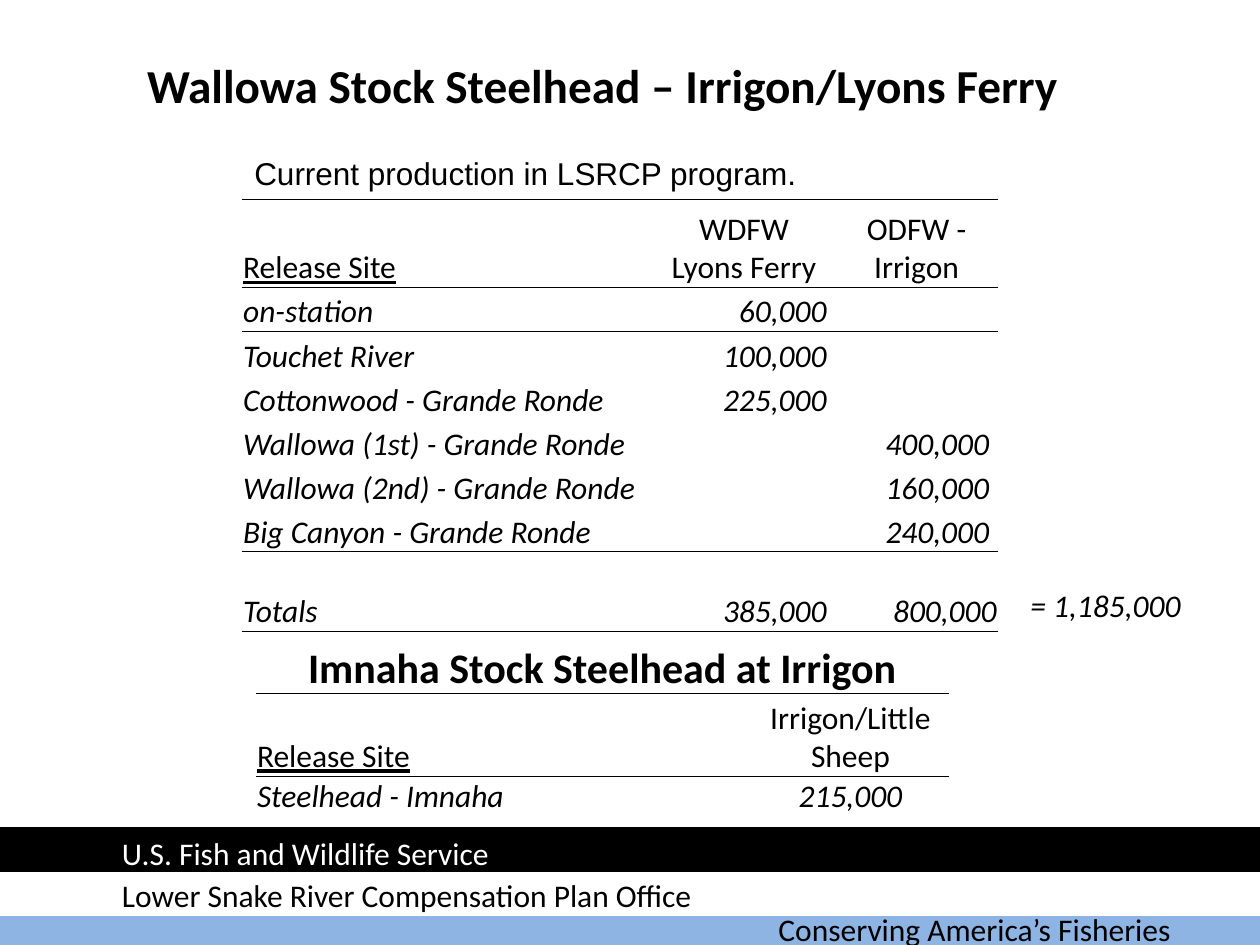
from lxml.etree import SubElement
from pptx import Presentation
from pptx.dml.color import RGBColor
from pptx.enum.shapes import MSO_SHAPE
from pptx.enum.text import MSO_ANCHOR, PP_ALIGN
from pptx.oxml import parse_xml
from pptx.oxml.ns import nsdecls, qn
from pptx.util import Inches, Pt

BLACK = RGBColor(0x00, 0x00, 0x00)
WHITE = RGBColor(0xFF, 0xFF, 0xFF)
BLUE = RGBColor(0x8E, 0xB4, 0xE3)
PLAIN_TABLE_STYLE = "{2D5ABB26-0587-4C30-8999-92F81FD0307C}"
CELL_MARGIN = 0.01
NUMBER_MARGIN = 0.07

PRODUCTION = [
    ("Release Site", "WDFW\vLyons Ferry", "ODFW -\vIrrigon"),
    ("on-station", "60,000", ""),
    ("Touchet River", "100,000", ""),
    ("Cottonwood - Grande Ronde", "225,000", ""),
    ("Wallowa (1st) - Grande Ronde", "", "400,000"),
    ("Wallowa (2nd) - Grande Ronde", "", "160,000"),
    ("Big Canyon - Grande Ronde", "", "240,000"),
    ("Totals", "385,000", "800,000"),
]
IMNAHA = [
    ("Release Site", "Irrigon/Little\vSheep"),
    ("Steelhead - Imnaha", "215,000"),
]


def format_runs(paragraph, size=18, font="Calibri", color=BLACK,
                bold=False, italic=False, underline=False):
    for run in paragraph.runs:
        run.font.size = Pt(size)
        run.font.name = font
        run.font.color.rgb = color
        run.font.bold = bold
        run.font.italic = italic
        run.font.underline = underline


def add_band(slide, left, top, color):
    shape = slide.shapes.add_shape(
        MSO_SHAPE.RECTANGLE, Inches(left), Inches(top), Inches(10), Inches(0.33))
    shape.shadow.inherit = False
    shape.fill.solid()
    shape.fill.fore_color.rgb = color
    shape.line.color.rgb = color
    shape.line.width = Pt(2)


def add_text(slide, left, top, width, text, **style):
    shape = slide.shapes.add_textbox(
        Inches(left), Inches(top), Inches(width), Inches(0.4))
    shape.text_frame.word_wrap = True
    shape.text_frame.text = text
    format_runs(shape.text_frame.paragraphs[0], **style)
    return shape


def add_heading(slide, top, text, size):
    shape = add_text(slide, 0.47, top, 8.62, text, size=size, bold=True)
    shape.height = Inches(0.5)
    shape.text_frame.vertical_anchor = MSO_ANCHOR.MIDDLE
    shape.text_frame.paragraphs[0].alignment = PP_ALIGN.CENTER


def add_rule(cell, tag):
    line = parse_xml(f'<a:{tag} {nsdecls("a")} w="6350"/>')
    fill = SubElement(line, qn("a:solidFill"))
    SubElement(fill, qn("a:srgbClr"), val=str(BLACK))
    cell._tc.get_or_add_tcPr().insert(0, line)


def fill_cell(cell, text, alignment, right_margin, **style):
    cell.fill.background()
    cell.margin_left = cell.margin_top = Inches(CELL_MARGIN)
    cell.margin_right = Inches(right_margin)
    cell.margin_bottom = 0
    cell.vertical_anchor = MSO_ANCHOR.BOTTOM
    cell.text_frame.text = text
    paragraph = cell.text_frame.paragraphs[0]
    paragraph.alignment = alignment
    format_runs(paragraph, **style)


def add_release_table(slide, left, top, widths, heights, rows, rules, number_alignment):
    frame = slide.shapes.add_table(
        len(rows), len(widths), Inches(left), Inches(top),
        Inches(sum(widths)), Inches(sum(heights)))
    table = frame.table
    table.first_row = table.horz_banding = False
    table._tbl.tblPr.find(qn("a:tableStyleId")).text = PLAIN_TABLE_STYLE
    for column, width in zip(table.columns, widths):
        column.width = Inches(width)
    for row, height in zip(table.rows, heights):
        row.height = Inches(height)

    for row_index, values in enumerate(rows):
        header = row_index == 0
        for column_index, text in enumerate(values):
            cell = table.cell(row_index, column_index)
            label = column_index == 0
            if label:
                alignment = PP_ALIGN.LEFT
            else:
                alignment = PP_ALIGN.CENTER if header else number_alignment
            grand_total = (row_index, column_index) == (7, 2)
            padded = alignment == PP_ALIGN.RIGHT and not grand_total
            fill_cell(cell, text, alignment, NUMBER_MARGIN if padded else CELL_MARGIN,
                      italic=not header, underline=header and label)
            if row_index + 1 in rules:
                add_rule(cell, "lnB")
            if row_index in rules:
                add_rule(cell, "lnT")


def main():
    presentation = Presentation()
    presentation.slide_width = Inches(10)
    presentation.slide_height = Inches(7.5)
    slide = presentation.slides.add_slide(presentation.slide_layouts[6])

    add_band(slide, -0.01, 7.17, BLUE)
    add_band(slide, 0, 6.93, WHITE)
    add_band(slide, 0, 6.58, BLACK)
    add_text(slide, 6.08, 7.17, 3.67, "Conserving America’s Fisheries")
    add_text(slide, 0.87, 6.57, 4.16, "U.S. Fish and Wildlife Service", color=WHITE)
    add_text(slide, 0.87, 6.9, 4.97, "Lower Snake River Compensation Plan Office")

    add_heading(slide, 0.42, "Wallowa Stock Steelhead – Irrigon/Lyons Ferry", 27)
    add_release_table(slide, 1.92, 1.58, [3.26, 1.45, 1.29], [0.7] + [0.35] * 6 + [0.63],
                      PRODUCTION, {0, 1, 7, 8}, PP_ALIGN.RIGHT)
    add_text(slide, 1.92, 1.17, 6, "Current production in LSRCP program.", font="Arial")
    add_text(slide, 8.08, 4.6, 1.5, "= 1,185,000", italic=True)

    add_release_table(slide, 2.03, 5.5, [3.94, 1.56], [0.66, 0.32],
                      IMNAHA, {0, 1}, PP_ALIGN.CENTER)
    add_heading(slide, 5.04, "Imnaha Stock Steelhead at Irrigon", 24)
    presentation.save("out.pptx")


if __name__ == "__main__":
    main()
